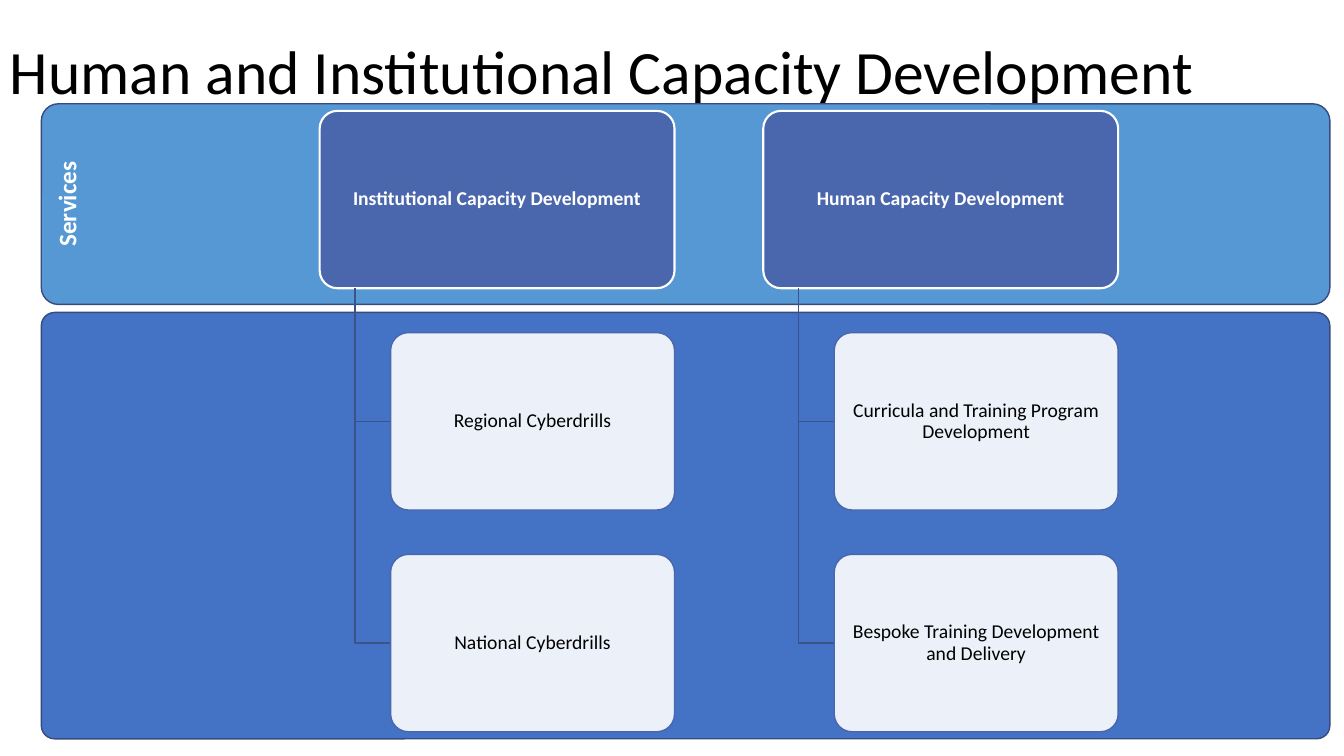
import lxml.etree
import pptx
import pptx.dml.color
import pptx.enum.shapes
import pptx.enum.text
import pptx.oxml.ns
import pptx.util

THEME = {
    "font": "Calibri",
    "ink": "000000", "white": "FFFFFF",
    "top": "5698D3", "base": "4472C4", "edge": "374B7F",
    "head": "4A66AC", "link": "3B528A",
    "title": 44, "label": 18, "body": 14,
}

# Grid: a card is 10 by 5 units, and a step adds a quarter of it
UNIT = 0.352
LEFT, TOP = 3.17, 1.1
WIDE, HIGH = 10, 5
STEP_X, STEP_Y = WIDE * 1.25, HIGH * 1.25

BANDS = [  # top, height, corner, fill, label
    (1.03, 1.99, 0.085, "top", "Services"),
    (3.1, 4.23, 0.031, "base", ""),
]
TREES = [
    ("Institutional Capacity Development",
     ["Regional Cyberdrills", "National Cyberdrills"]),
    ("Human Capacity Development",
     ["Curricula and Training Program Development",
      "Bespoke Training Development and Delivery"]),
]

ANCHOR = pptx.enum.text.MSO_ANCHOR
ALIGN = pptx.enum.text.PP_ALIGN


def inch(*sizes):
    return [pptx.util.Inches(size) for size in sizes]


def tint(name):
    return pptx.dml.color.RGBColor.from_string(THEME[name])


def grid(col, row):
    """Turn grid units into inches on the slide."""
    return LEFT + col * UNIT, TOP + row * UNIT


def assign(item, values):
    for name, value in values.items():
        setattr(item, name, value)


def write(shape, text, size, ink, bold=False, align=ALIGN.CENTER,
          space=0.9, **frame):
    """Put one paragraph in a shape; frame holds text frame settings."""
    body = shape.text_frame
    assign(body, {"word_wrap": True, **frame})
    para = body.paragraphs[0]
    para.text = text
    assign(para, {"alignment": align, "line_spacing": space})
    assign(para.font, {"name": THEME["font"], "bold": bold,
                       "size": pptx.util.Pt(THEME[size])})
    para.font.color.rgb = tint(ink)


def stroke(shape, color, width):
    shape.shadow.inherit = False
    shape.line.color.rgb = tint(color)
    shape.line.width = pptx.util.Pt(width)


def panel(slide, box, corner, fill, edge, width=1):
    """Draw a rounded box."""
    kind = pptx.enum.shapes.MSO_SHAPE.ROUNDED_RECTANGLE
    shape = slide.shapes.add_shape(kind, *inch(*box))
    shape.adjustments[0] = corner
    shape.fill.solid()
    shape.fill.fore_color.rgb = tint(fill)
    stroke(shape, edge, width)
    return shape


def band(slide, top, high, corner, fill, label):
    """Draw a full-width band with an upright label."""
    shape = panel(slide, (0.41, top, 12.78, high), corner, fill, "edge")
    if label:
        write(shape, label, "label", "white", True, space=1,
              vertical_anchor=ANCHOR.TOP)
        shape.text_frame._txBody.bodyPr.set("vert", "vert270")


def card(slide, col, row, wide, text, head=False):
    """Draw a head card or a pale, slightly clear item card."""
    box = (*grid(col, row), wide * UNIT, HIGH * UNIT)
    fill, edge, width = ("head", "white", 1.5) if head else ("white", "head", 1)
    shape = panel(slide, box, 0.1, fill, edge, width)
    if not head:
        qn = pptx.oxml.ns.qn
        color = shape.element.spPr.find(qn("a:solidFill"))[0]
        lxml.etree.SubElement(color, qn("a:alpha")).set("val", "90000")
    side, end = inch(0.08, 0.07)
    write(shape, text, "body", "white" if head else "ink", head,
          vertical_anchor=ANCHOR.MIDDLE, margin_left=side, margin_right=side,
          margin_top=end, margin_bottom=end)


def elbow(slide, col, row):
    """Link the foot of a head card to the side of an item card."""
    spots = [(col + 1, HIGH), (col + 1, row + HIGH / 2),
             (col + 2, row + HIGH / 2)]
    start, *rest = [inch(*grid(*spot)) for spot in spots]
    build = slide.shapes.build_freeform(*start)
    build.add_line_segments(rest, close=False)
    shape = build.convert_to_shape()
    shape.fill.background()
    stroke(shape, "link", 1)


def tree(slide, col, head, items):
    """Draw a head card with its items below."""
    card(slide, col, 0, WIDE, head, True)
    for rank, text in enumerate(items, 1):
        row = rank * STEP_Y
        elbow(slide, col, row)
        card(slide, col + 2, row, WIDE - 2, text)


def main():
    deck = pptx.Presentation()
    deck.slide_width, deck.slide_height = inch(13.33, 7.5)
    slide = deck.slides.add_slide(deck.slide_layouts[6])

    # Title
    title = slide.shapes.add_textbox(*inch(0, 0.01, 13.18, 1.45))
    write(title, "Human and Institutional Capacity Development", "title",
          "ink", align=ALIGN.LEFT, vertical_anchor=ANCHOR.MIDDLE)

    # Background bands
    for spot in BANDS:
        band(slide, *spot)

    # Service trees
    for rank, (head, items) in enumerate(TREES):
        tree(slide, rank * STEP_X, head, items)

    deck.save("out.pptx")


if __name__ == "__main__":
    main()
